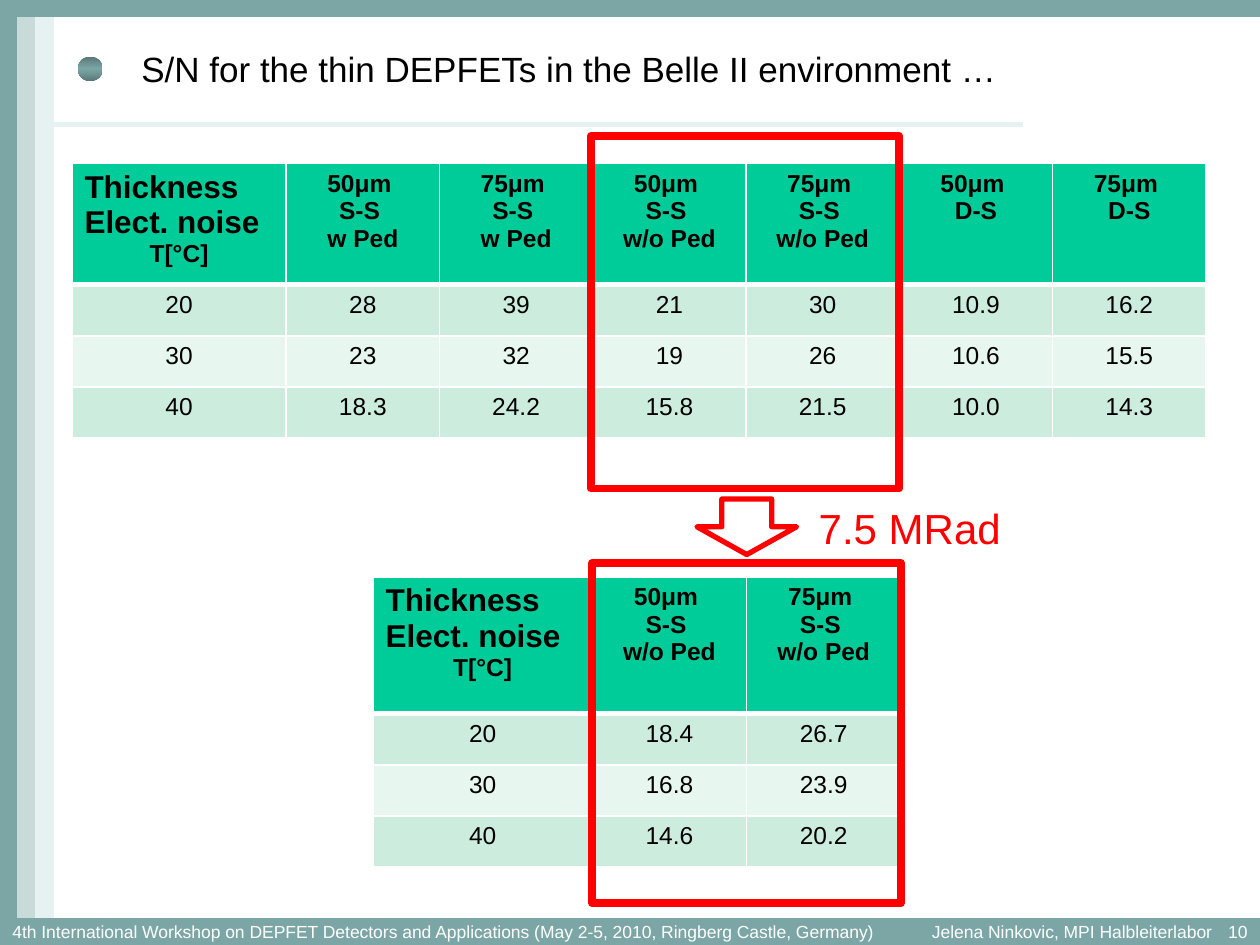
from copy import deepcopy
from lxml.etree import SubElement
from pptx import Presentation
from pptx.dml.color import RGBColor
from pptx.enum.shapes import MSO_CONNECTOR, MSO_SHAPE
from pptx.enum.text import MSO_ANCHOR, PP_ALIGN
from pptx.oxml.ns import qn
from pptx.util import Cm, Pt

HUES = {"teal": "7CA6A6", "dark": "597777", "mist": "C9DBD8", "pale": "E6F2F2",
        "head": "00CC99", "odd": "CCECDE", "even": "E7F6EF",
        "red": "FF0000", "white": "FFFFFF", "black": "000000"}
TINTS = {name: RGBColor.from_string(code) for name, code in HUES.items()}

deck = Presentation()
deck.slide_width, deck.slide_height = Cm(25.4), Cm(19.05)
slide = deck.slides.add_slide(deck.slide_layouts[6])
shapes = slide.shapes


def draw(kind, box, fill, line, width):
    shape = shapes.add_shape(kind, *map(Cm, box))
    shape.shadow.inherit = False
    if fill:
        shape.fill.solid()
        shape.fill.fore_color.rgb = TINTS[fill]
    else:
        shape.fill.background()
    shape.line.color.rgb = TINTS[line]
    shape.line.width = Pt(width)
    return shape


def style(para, text, size, tint, align, bold=False):
    para.text = text
    para.alignment = align
    for run in para.runs:
        for key, value in {"name": "Arial", "size": Pt(size), "bold": bold}.items():
            setattr(run.font, key, value)
        run.font.color.rgb = TINTS[tint]


bars = [("mist", (0.33, 0, 0.38, 18.52)), ("pale", (0.71, 0, 0.36, 19.05)),
        ("teal", (0, 18.52, 25.4, 0.53)), ("teal", (0, 0, 0.33, 18.52)),
        ("teal", (0, 0, 25.4, 0.33))]
for tint, box in bars:
    draw(MSO_SHAPE.RECTANGLE, box, tint, tint, 0.75)

rule = shapes.add_connector(MSO_CONNECTOR.STRAIGHT, Cm(0.81), Cm(2.51), Cm(20.62), Cm(2.51))
rule.line.color.rgb = TINTS["pale"]
rule.line.width = Pt(3)
SubElement(rule._element.spPr, qn("a:effectLst"))

dot = draw(MSO_SHAPE.OVAL, (1.57, 1.14, 0.5, 0.5), None, "teal", 0.75)
dot.line.fill.background()
dot.fill.gradient()
dot.fill.gradient_angle = 90
first = next(dot._element.iter(qn("a:gs")))
first.addnext(deepcopy(first))
for stop, tint, place in zip(dot.fill.gradient_stops, ("dark", "teal", "dark"), (0, 0.5, 1)):
    stop.color.rgb = TINTS[tint]
    stop.position = place

LEFT, MID, RIGHT = PP_ALIGN.LEFT, PP_ALIGN.CENTER, PP_ALIGN.RIGHT
notes = [
    ("S/N for the thin DEPFETs in the Belle II environment …",
     (1.07, 0.53, 21.59, 1.7), 20, "black", LEFT, 1.78, 0.25, True),
    ("4th International Workshop on DEPFET Detectors and Applications "
     "(May 2-5, 2010, Ringberg Castle, Germany)",
     (0.25, 18.52, 18.54, 0.53), 10, "white", LEFT, 0, 0, True),
    ("Jelena Ninkovic, MPI Halbleiterlabor",
     (17.98, 18.52, 6.45, 0.53), 10, "white", RIGHT, 0, 0, True),
    ("10", (22.86, 18.52, 2.54, 0.53), 10, "white", RIGHT, 0.25, 0.25, True),
    ("7.5 MRad", (16.23, 10.01, 4.22, 1.27), 24, "red", MID, 0.25, 0.25, False)]
for text, box, size, tint, align, start, end, wrap in notes:
    frame = shapes.add_textbox(*map(Cm, box)).text_frame
    form = {"word_wrap": wrap, "vertical_anchor": MSO_ANCHOR.MIDDLE,
            "margin_left": Cm(start), "margin_right": Cm(end),
            "margin_top": 0, "margin_bottom": 0}
    for key, value in form.items():
        setattr(frame, key, value)
    style(frame.paragraphs[0], text, size, tint, align)

corner = [("Thickness", 18, LEFT), ("Elect. noise", 18, LEFT), ("T[°C]", 14, MID)]
grids = [
    ((1.45, 3.3), (4.32, 3.09), 2.44, (11.91, 2.74, 6.22, 7.11),
     [["50μm \nS-S \nw Ped", "75μm \nS-S \nw Ped", "50μm \nS-S \nw/o Ped",
       "75μm \nS-S \nw/o Ped", "50μm \nD-S", "75μm \nD-S"],
      ["20", "28", "39", "21", "30", "10.9", "16.2"],
      ["30", "23", "32", "19", "26", "10.6", "15.5"],
      ["40", "18.3", "24.2", "15.8", "21.5", "10.0", "14.3"]]),
    ((7.52, 11.63), (4.42, 3.11), 2.76, (11.94, 11.35, 6.22, 6.86),
     [["50μm \nS-S \nw/o Ped", "75μm \nS-S \nw/o Ped"],
      ["20", "18.4", "26.7"],
      ["30", "16.8", "23.9"],
      ["40", "14.6", "20.2"]])]
for (left, top), (wide, slim), tall, ring, (heads, *body) in grids:
    rows = [[corner] + [[(head, 14, MID)] for head in heads]]
    rows += [[[(value, 14, MID)] for value in row] for row in body]
    count = len(rows[0])
    span = wide + slim * (count - 1)
    table = shapes.add_table(len(rows), count, Cm(left), Cm(top), Cm(span),
                             Cm(tall + 1.03 * len(body))).table
    table.first_row = table.horz_banding = False
    for i, col in enumerate(table.columns):
        col.width = Cm(slim if i else wide)
    for i, row in enumerate(rows):
        table.rows[i].height = Cm(1.03 if i else tall)
        for j, lines in enumerate(row):
            cell = table.cell(i, j)
            props = cell._tc.get_or_add_tcPr()
            for side in "LRTB":
                thick = 3 if (i, side) in ((0, "B"), (1, "T")) else 1
                edge = SubElement(props, qn(f"a:ln{side}"), w=str(Pt(thick)))
                paint = SubElement(edge, qn("a:solidFill"))
                SubElement(paint, qn("a:srgbClr"), val=HUES["white"])
            cell.fill.solid()
            cell.fill.fore_color.rgb = TINTS["head" if i == 0 else "odd" if i % 2 else "even"]
            frame = cell.text_frame
            for k, (text, size, align) in enumerate(lines):
                para = frame.add_paragraph() if k else frame.paragraphs[0]
                style(para, text, size, "black", align, i == 0)
    draw(MSO_SHAPE.RECTANGLE, ring, None, "red", 4.5)

draw(MSO_SHAPE.DOWN_ARROW, (14.05, 10.06, 2.01, 1.12), "white", "red", 3)

deck.save("out.pptx")
